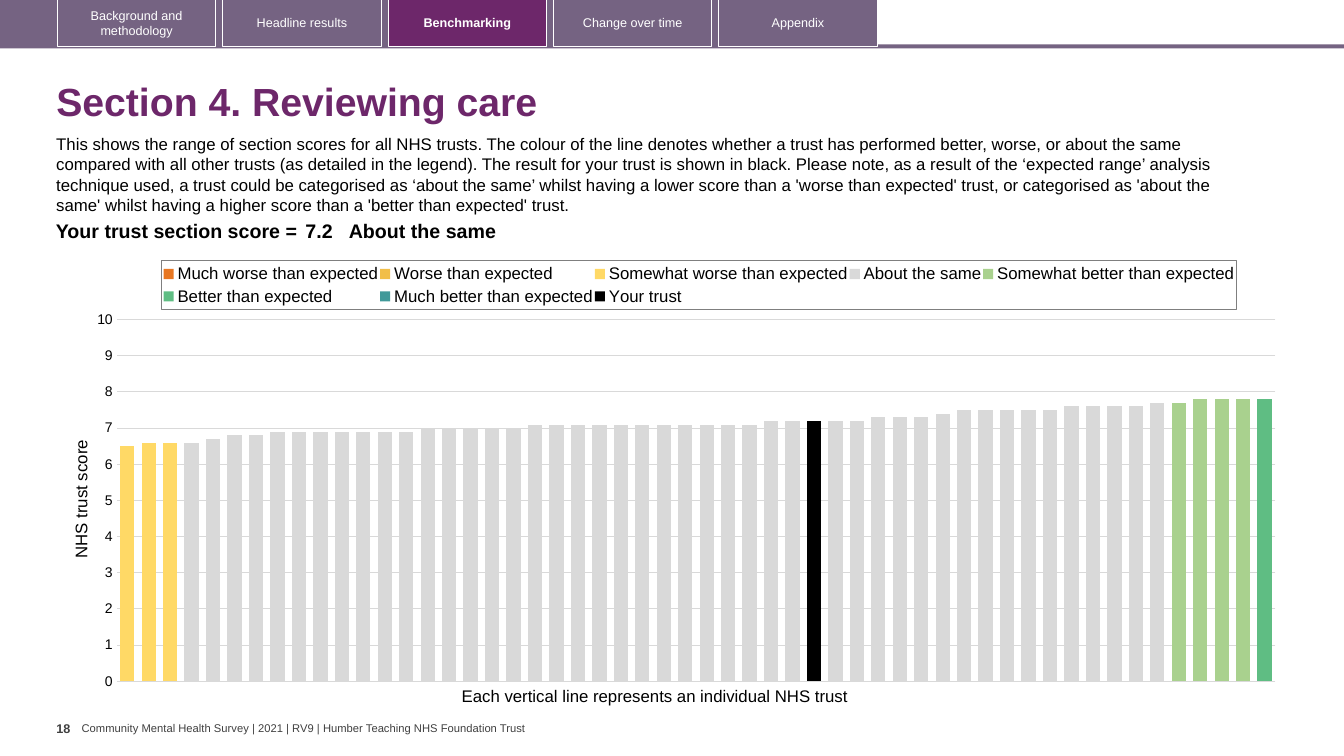
import copy

import pptx
import pptx.chart.data
import pptx.dml.color
import pptx.enum.chart
import pptx.enum.shapes
import pptx.enum.text
import pptx.oxml
import pptx.oxml.ns
import pptx.util

Inches = pptx.util.Inches
Pt = pptx.util.Pt
ALIGN = pptx.enum.text.PP_ALIGN
MIDDLE = pptx.enum.text.MSO_ANCHOR.MIDDLE
RECT = pptx.enum.shapes.MSO_SHAPE.RECTANGLE
COLORS = {"bar": "756382", "plum": "6D276A", "white": "FFFFFF", "black": "000000",
          "grey": "404040", "grid": "D9D9D9", "frame": "7F7F7F"}
TABS = ["Background and methodology", "Headline results", "Benchmarking",
        "Change over time", "Appendix"]
INTRO = (
    "This shows the range of section scores for all NHS trusts. The colour of the line "
    "denotes whether a trust has performed better, worse, or about the same compared with "
    "all other trusts (as detailed in the legend). The result for your trust is shown in "
    "black. Please note, as a result of the ‘expected range’ analysis technique used, a "
    "trust could be categorised as ‘about the same’ whilst having a lower score than a "
    "'worse than expected' trust, or categorised as 'about the same' whilst having a higher "
    "score than a 'better than expected' trust.")
SCORES = ([6.5] + [6.6] * 3 + [6.7] + [6.8] * 2 + [6.9] * 7 + [7.0] * 5 + [7.1] * 11
          + [7.2] * 5 + [7.3] * 3 + [7.4] + [7.5] * 5 + [7.6] * 4 + [7.7] * 2 + [7.8] * 4)
BANDS = [
    ("Much worse than expected", "E87722", 0, 0),
    ("Worse than expected", "F1BE48", 0, 0),
    ("Somewhat worse than expected", "FFD966", 0, 3),
    ("About the same", "D9D9D9", 3, 49),
    ("Somewhat better than expected", "A9D18E", 49, 53),
    ("Better than expected", "5FBD83", 53, 54),
    ("Much better than expected", "419999", 0, 0),
    ("Your trust", "000000", 32, 33),
]


def rgb(code):
    """Return the colour for a hex string."""
    return pptx.dml.color.RGBColor.from_string(code)


def style(font, size, color="black", bold=False):
    """Format a font."""
    font.name, font.size, font.bold = "Arial", Pt(size), bold
    font.color.rgb = rgb(COLORS[color])


def label(slide, box, text, size, color="black", bold=False, wrap=True, inset=0.1):
    """Place a text box and return its frame."""
    frame = slide.shapes.add_textbox(*map(Inches, box)).text_frame
    frame.word_wrap = wrap
    frame.margin_left = frame.margin_right = Inches(inset)
    frame.text = text
    style(frame.paragraphs[0].runs[0].font, size, color, bold)
    return frame


def block(slide, box, fill=None, line=None):
    """Place a flat rectangle."""
    shape = slide.shapes.add_shape(RECT, *map(Inches, box))
    shape.shadow.inherit = False
    if fill:
        shape.fill.solid()
        shape.fill.fore_color.rgb = rgb(COLORS[fill])
    else:
        shape.fill.background()
    if line:
        shape.line.color.rgb = rgb(COLORS[line])
        shape.line.width = Pt(0.75)
    else:
        shape.line.fill.background()
    return shape


def header(slide, box, active):
    """Draw the tab bar with one active tab."""
    left, top, width, height = box
    block(slide, (left, top + 0.44, width, 0.04), "bar")
    block(slide, (left, top, 8.73, height), "bar")
    for i, name in enumerate(TABS):
        on = name == active
        tab = block(slide, (left + 0.6 + i * 1.64, top - 0.01, 1.57, height),
                    "plum" if on else None, "white")
        frame = tab.text_frame
        frame.text = name
        frame.vertical_anchor = MIDDLE
        frame.paragraphs[0].alignment = ALIGN.CENTER
        style(frame.paragraphs[0].runs[0].font, 9, "white", on)


def intro(slide, box):
    """Write the heading and the text under it."""
    left, top, width, height = box
    frame = label(slide, (left, top, width, 0.72), "Section 4. Reviewing care",
                  28, "plum", True)
    frame.vertical_anchor = MIDDLE
    frame.paragraphs[0].line_spacing = 0.9
    label(slide, (left, top + 0.61, 12.13, height - 0.62), INTRO, 12)


def result(slide, box):
    """Place the score table."""
    table = slide.shapes.add_table(1, 3, *map(Inches, box)).table
    table.first_row = table.horz_banding = False
    parts = [("Your trust section score =", 2.63, 0.04), ("7.2", 0.47, 0.04),
             ("About the same", box[2] - 3.1, 0)]
    for i, (text, width, inset) in enumerate(parts):
        table.columns[i].width = Inches(width)
        cell = table.cell(0, i)
        cell.fill.background()
        cell.margin_left = cell.margin_right = Inches(inset)
        cell.margin_top = cell.margin_bottom = Inches(0.04)
        cell.text = text
        style(cell.text_frame.paragraphs[0].runs[0].font, 14, bold=True)
    table.cell(0, 0).text_frame.paragraphs[0].alignment = ALIGN.RIGHT


def layout(host, index, spot, inner=False):
    """Fix the place of a chart part as shares of the chart."""
    for old in host.findall(pptx.oxml.ns.qn("c:layout")):
        host.remove(old)
    target = '<c:layoutTarget val="inner"/>' if inner else ""
    modes = '<c:xMode val="edge"/><c:yMode val="edge"/>'
    sizes = "".join(f'<c:{k} val="{v}"/>' for k, v in zip("xywh", spot))
    host.insert(index, pptx.oxml.parse_xml(
        f'<c:layout {pptx.oxml.ns.nsdecls("c")}><c:manualLayout>'
        f'{target}{modes}{sizes}</c:manualLayout></c:layout>'))


def split(area):
    """Move the last series to a second pair of axes."""
    first = area.xpath("c:barChart")[0]
    second = copy.deepcopy(first)
    first.remove(first.xpath("c:ser")[-1])
    for bars in second.xpath("c:ser")[:-1]:
        second.remove(bars)
    first.addnext(second)
    ids = {"c:catAx": "5001", "c:valAx": "5002"}
    for node, code in zip(second.xpath("c:axId"), ids.values()):
        node.set("val", code)
    last = area.xpath("c:valAx")[0]
    for tag, other in (("c:valAx", "c:catAx"), ("c:catAx", "c:valAx")):
        axis = copy.deepcopy(area.xpath(tag)[0])
        axis.xpath("c:axId")[0].set("val", ids[tag])
        axis.xpath("c:crossAx")[0].set("val", ids[other])
        if tag == "c:valAx":
            for part in axis.xpath("c:majorGridlines | c:title"):
                axis.remove(part)
            for name, value in (("axPos", "r"), ("majorTickMark", "out"),
                                ("tickLblPos", "none"), ("crosses", "max")):
                axis.xpath("c:" + name)[0].set("val", value)
        last.addnext(axis)
        last = axis


def scores(slide, box):
    """Draw the chart of trust scores and its caption."""
    left, top, width, height = box
    data = pptx.chart.data.CategoryChartData()
    data.categories = [str(i + 1) for i in range(len(SCORES))]
    for name, _, start, end in BANDS:
        data.add_series(name, [v if start <= i < end else None
                               for i, v in enumerate(SCORES)])
    chart = slide.shapes.add_chart(
        pptx.enum.chart.XL_CHART_TYPE.COLUMN_CLUSTERED, *map(Inches, box), data).chart
    chart.has_title = False
    style(chart.font, 10)
    plot = chart.plots[0]
    plot.gap_width, plot.overlap, plot.vary_by_categories = 50, 100, False
    for bars, band in zip(plot.series, BANDS):
        bars.format.fill.solid()
        bars.format.fill.fore_color.rgb = rgb(band[1])
    chart.category_axis.visible = False
    axis = chart.value_axis
    axis.minimum_scale, axis.maximum_scale, axis.major_unit = 0, 10, 1
    axis.major_tick_mark = pptx.enum.chart.XL_TICK_MARK.NONE
    axis.tick_labels.number_format = "0"
    axis.tick_labels.number_format_is_linked = False
    style(axis.tick_labels.font, 10)
    axis.format.line.fill.background()
    grid = axis.major_gridlines.format.line
    grid.color.rgb, grid.width = rgb(COLORS["grid"]), Pt(0.75)
    frame = axis.axis_title.text_frame
    frame.text = "NHS trust score"
    style(frame.paragraphs[0].runs[0].font, 12)
    layout(axis.axis_title._element, 1, (0, 0.42))
    chart.has_legend = True
    key = chart.legend
    key.position = pptx.enum.chart.XL_LEGEND_POSITION.TOP
    key.include_in_layout = False
    style(key.font, 12)
    layout(key._element, 1, (0.077, 0.026, 0.877, 0.11))
    key._element.find(pptx.oxml.ns.qn("c:overlay")).addnext(pptx.oxml.parse_xml(
        f'<c:spPr {pptx.oxml.ns.nsdecls("c", "a")}><a:ln w="9525"><a:solidFill>'
        f'<a:srgbClr val="{COLORS["frame"]}"/></a:solidFill></a:ln></c:spPr>'))
    area = chart._chartSpace.find(".//" + pptx.oxml.ns.qn("c:plotArea"))
    layout(area, 0, (0.04, 0.158, 0.946, 0.808), True)
    split(area)
    label(slide, (left + 3.81, top + 4.28, 4.11, 0.3),
          "Each vertical line represents an individual NHS trust", 12, wrap=False)


def footer(slide, box):
    """Write the page number and the survey name."""
    left, top, width, height = box
    label(slide, (left, top, 0.25, height), "18", 9, "grey", True, False, 0)
    frame = label(slide, (left + 0.25, top + 0.06, width - 0.25, 0.13),
                  "Community Mental Health Survey | 2021 | RV9 | "
                  "Humber Teaching NHS Foundation Trust", 8, "grey", wrap=False, inset=0)
    frame.margin_top = frame.margin_bottom = 0
    frame.vertical_anchor = MIDDLE


def main():
    """Build and save the slide."""
    deck = pptx.Presentation()
    deck.slide_width, deck.slide_height = Inches(13.33), Inches(7.5)
    slide = deck.slides.add_slide(deck.slide_layouts[6])
    header(slide, (-0.03, 0, 13.36, 0.47), "Benchmarking")
    intro(slide, (0.46, 0.67, 12.49, 1.53))
    scores(slide, (0.67, 2.47, 12.15, 4.44))
    result(slide, (0.36, 2.15, 11.7, 0.31))
    footer(slide, (0.56, 7.1, 4.73, 0.4))
    deck.save("out.pptx")


if __name__ == "__main__":
    main()
